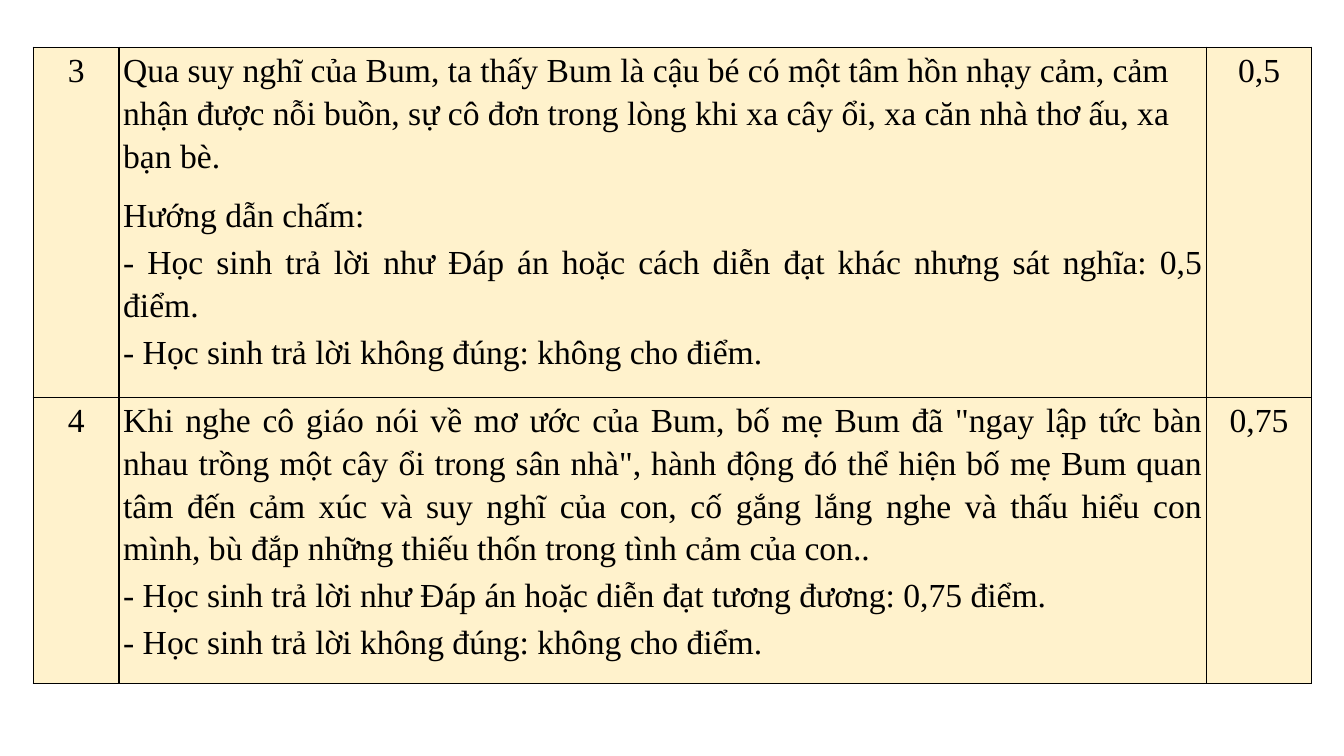
from lxml.etree import SubElement
from pptx import Presentation
from pptx.dml.color import RGBColor
from pptx.enum.text import PP_ALIGN
from pptx.oxml.ns import qn
from pptx.util import Pt

COLORS = {"text": "000000", "border": "000000", "cell": "FFF2CC"}
FONT, FONT_SIZE = "Times New Roman", 24
WRONG_ANSWER = "- Học sinh trả lời không đúng: không cho điểm."

# Question number, marking guide, points
ROWS = [
    (
        ["3"],
        [
            "Qua suy nghĩ của Bum, ta thấy Bum là cậu bé có một tâm hồn nhạy cảm, cảm nhận "
            "được nỗi buồn, sự cô đơn trong lòng khi xa cây ổi, xa căn nhà thơ ấu, xa bạn bè.",
            "Hướng dẫn chấm:",
            "- Học sinh trả lời như Đáp án hoặc cách diễn đạt khác nhưng sát nghĩa: 0,5 điểm.",
            WRONG_ANSWER,
        ],
        ["0,5"],
    ),
    (
        ["4"],
        [
            "Khi nghe cô giáo nói về mơ ước của Bum, bố mẹ Bum đã \"ngay lập tức bàn nhau "
            "trồng một cây ổi trong sân nhà\", hành động đó thể hiện bố mẹ Bum quan tâm đến "
            "cảm xúc và suy nghĩ của con, cố gắng lắng nghe và thấu hiểu con mình, bù đắp "
            "những thiếu thốn trong tình cảm của con..",
            "- Học sinh trả lời như Đáp án hoặc diễn đạt tương đương: 0,75 điểm.",
            WRONG_ANSWER,
        ],
        ["0,75"],
    ),
]
COLUMN_ALIGNMENTS = [PP_ALIGN.CENTER, PP_ALIGN.JUSTIFY, PP_ALIGN.CENTER]
COLUMN_WIDTHS = [61.2, 776.9, 74.9]
ROW_HEIGHTS = [250, 204.5]
TABLE_LEFT, TABLE_TOP = 23.8, 33.8
CELL_MARGIN = 3


def add_borders(cell):
    properties = cell._tc.get_or_add_tcPr()
    for side in ("lnL", "lnR", "lnT", "lnB"):
        line = SubElement(properties, qn(f"a:{side}"), w=str(Pt(1)))
        fill = SubElement(line, qn("a:solidFill"))
        SubElement(fill, qn("a:srgbClr"), val=COLORS["border"])


def format_paragraph(paragraph, alignment):
    paragraph.alignment = alignment
    paragraph.line_spacing = 1.15
    paragraph.space_before, paragraph.space_after = Pt(2), Pt(1)
    for run in paragraph.runs:
        run.font.name, run.font.size = FONT, Pt(FONT_SIZE)
        run.font.bold = False
        run.font.color.rgb = RGBColor.from_string(COLORS["text"])


def fill_cell(cell, lines, alignment):
    cell.margin_left = cell.margin_right = Pt(CELL_MARGIN)
    cell.margin_top = cell.margin_bottom = 0
    add_borders(cell)
    cell.fill.solid()
    cell.fill.fore_color.rgb = RGBColor.from_string(COLORS["cell"])
    cell.text_frame.text = "\n".join(lines)
    for paragraph in cell.text_frame.paragraphs:
        format_paragraph(paragraph, alignment)


def main():
    presentation = Presentation()
    presentation.slide_width, presentation.slide_height = Pt(960), Pt(540)
    slide = presentation.slides.add_slide(presentation.slide_layouts[6])
    table = slide.shapes.add_table(
        len(ROWS), len(COLUMN_WIDTHS), Pt(TABLE_LEFT), Pt(TABLE_TOP),
        Pt(sum(COLUMN_WIDTHS)), Pt(sum(ROW_HEIGHTS)),
    ).table
    table.first_row = table.horz_banding = False
    for column, width in zip(table.columns, COLUMN_WIDTHS):
        column.width = Pt(width)
    for row, height, contents in zip(table.rows, ROW_HEIGHTS, ROWS):
        row.height = Pt(height)
        for cell, lines, alignment in zip(row.cells, contents, COLUMN_ALIGNMENTS):
            fill_cell(cell, lines, alignment)

    # The opening answer is set apart from its marking guide
    opening = table.cell(0, 1).text_frame.paragraphs[0]
    opening.alignment = PP_ALIGN.LEFT
    opening.space_before, opening.space_after = Pt(0), Pt(10)
    presentation.save("out.pptx")


if __name__ == "__main__":
    main()
